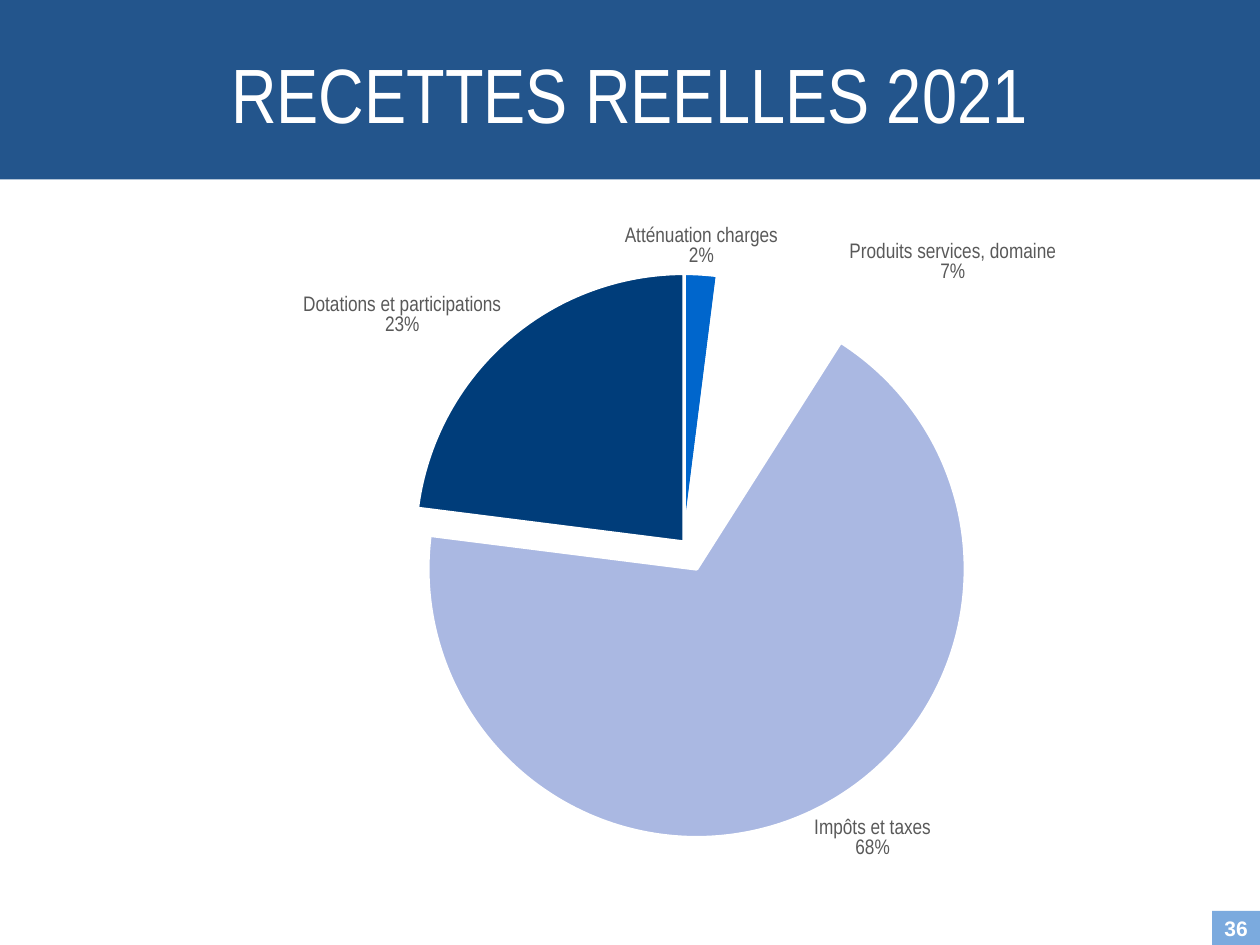
from lxml import etree
from pptx import Presentation
from pptx import util as u
from pptx.chart.data import CategoryChartData
from pptx.dml.color import RGBColor
from pptx.enum import chart as ch, shapes, text
from pptx.oxml import parse_xml
from pptx.oxml.ns import nsdecls

W, H = 10, 7.5
COLORS = {"banner": "23558C", "page": "7BAADE", "white": "FFFFFF", "label": "595959"}
REVENUES = [
    ("Atténuation charges", 2, "0066CC"),
    ("Produits services, domaine", 7, "FFFFFF"),
    ("Impôts et taxes", 68, "AAB8E2"),
    ("Dotations et participations", 23, "003D7A"),
]


def rgb(value):
    return RGBColor.from_string(value)


def box(x, y, w, h):
    return [u.Inches(n) for n in (x * W, y * H, w * W, h * H)]


def style_font(font, name, size, color, bold=False):
    font.name, font.size, font.bold = name, u.Pt(size), bold
    font.color.rgb = rgb(color)


def add_panel(s, area, fill, words, name, size, bold=False, top=0.05):
    sp = s.shapes.add_shape(shapes.MSO_SHAPE.RECTANGLE, *box(*area))
    sp.shadow.inherit = False
    sp.fill.solid()
    sp.fill.fore_color.rgb = rgb(fill)
    sp.line.fill.background()
    tf = sp.text_frame
    tf.word_wrap = False
    tf.vertical_anchor = text.MSO_ANCHOR.MIDDLE
    tf.margin_top = u.Inches(top)
    p = tf.paragraphs[0]
    p.alignment = text.PP_ALIGN.CENTER
    r = p.add_run()
    r.text = words
    style_font(r.font, name, size, COLORS["white"], bold)


def manual_layout(x, y, w=None, h=None):
    layout = parse_xml(f"<c:layout {nsdecls('c')}><c:manualLayout/></c:layout>")
    items = [("x", x), ("y", y)]
    if w:
        items = [("layoutTarget", "inner"), ("xMode", "edge"), ("yMode", "edge"),
                 *items, ("w", w), ("h", h)]
    for tag, value in items:
        etree.SubElement(layout[0], f"{{{layout.nsmap['c']}}}{tag}").set("val", str(value))
    return layout


def move_label(labels, idx, dx, dy):
    flags = {"showLegendKey": 0, "showVal": 0, "showCatName": 1,
             "showSerName": 0, "showPercent": 1, "showBubbleSize": 0}
    shown = "".join(f'<c:{tag} val="{on}"/>' for tag, on in flags.items())
    label = parse_xml(
        f'<c:dLbl {nsdecls("c")}><c:idx val="{idx}"/><c:dLblPos val="outEnd"/>'
        f"{shown}<c:separator>\n</c:separator></c:dLbl>")
    label.insert(1, manual_layout(dx, dy))
    labels.insert(0, label)


def add_pie(s, area):
    data = CategoryChartData()
    data.categories = [name for name, _, _ in REVENUES]
    data.add_series("Recettes réelles 2021", [value for _, value, _ in REVENUES])
    chart = s.shapes.add_chart(ch.XL_CHART_TYPE.PIE, *box(*area), data).chart
    chart.has_title = False
    chart.has_legend = False
    style_font(chart.font, "Arial Narrow", 12, COLORS["label"])
    plot = chart.plots[0]
    plot.vary_by_categories = True
    series = plot.series[0]
    for i, (_, _, color) in enumerate(REVENUES):
        fmt = series.points[i].format
        fmt.fill.solid()
        fmt.fill.fore_color.rgb = rgb(color)
        fmt.line.color.rgb = rgb(COLORS["white"])
        fmt.line.width = u.Pt(2)
    c = f"{{{chart._chartSpace.nsmap['c']}}}"
    largest = series._element.findall(f"{c}dPt")[2]
    largest.find(f"{c}spPr").addprevious(
        parse_xml(f'<c:explosion {nsdecls("c")} val="11"/>'))

    labels = series.data_labels
    labels.show_value = False
    labels.show_category_name = True
    labels.show_percentage = True
    labels.position = ch.XL_LABEL_POSITION.OUTSIDE_END
    style_font(labels.font, "Arial Narrow", 12, COLORS["label"])
    node = labels._element
    for old in node.findall(f"{c}showLeaderLines"):
        node.remove(old)
    last = node.find(f"{c}showBubbleSize")
    if last is None:
        last = node.find(f"{c}showPercent")
    last.addnext(parse_xml(f'<c:showLeaderLines {nsdecls("c")} val="0"/>'))
    last.addnext(parse_xml(f"<c:separator {nsdecls('c')}>\n</c:separator>"))
    move_label(node, 1, 0.063, 0)

    plot_area = chart._chartSpace.chart.plotArea
    for old in plot_area.findall(f"{c}layout"):
        plot_area.remove(old)
    plot_area.insert(0, manual_layout(0.281, 0.203, 0.471, 0.695))


def main():
    prs = Presentation()
    prs.slide_width, prs.slide_height = u.Inches(W), u.Inches(H)
    s = prs.slides.add_slide(prs.slide_layouts[6])
    add_panel(s, (0.962, 0.964, 0.038, 0.036), COLORS["page"], "36", "Arial", 12, True)
    add_pie(s, (0.075, 0.123, 0.906, 0.819))
    add_panel(s, (0, 0, 1, 0.19), COLORS["banner"], "RECETTES REELLES 2021",
              "Arial Narrow", 44, top=0.09)
    prs.save("out.pptx")


if __name__ == "__main__":
    main()
